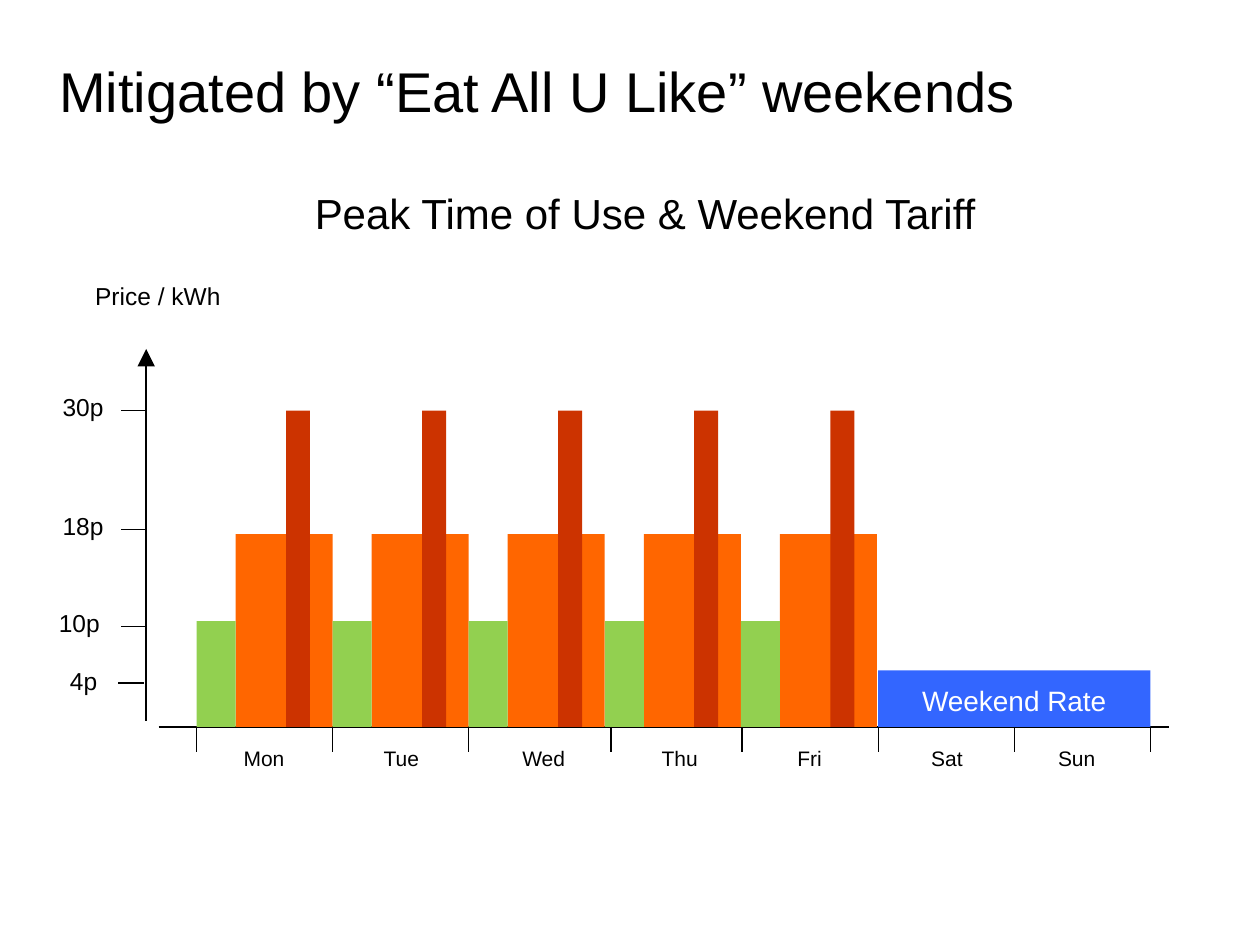
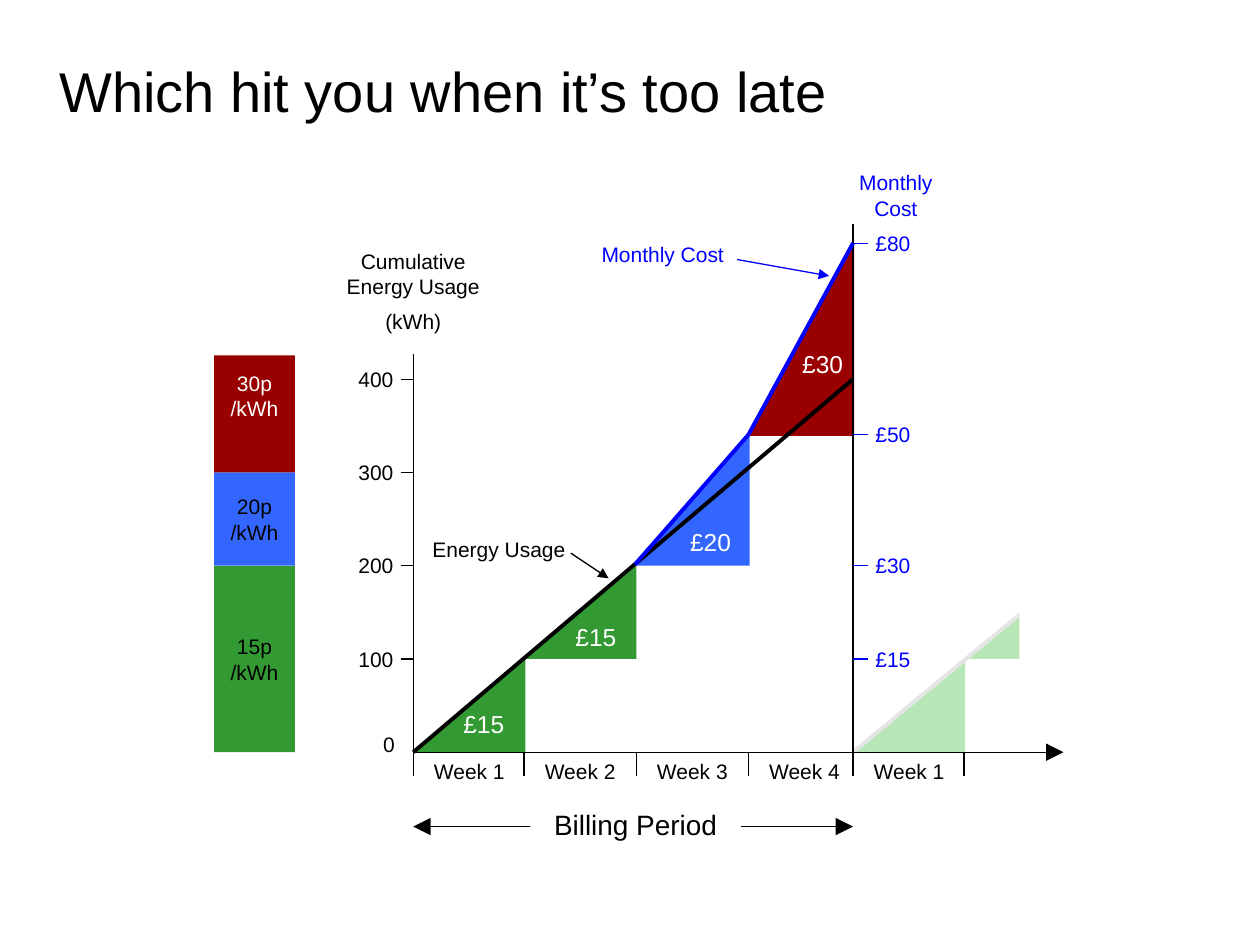
import pptx
import pptx.util
import pptx.dml.color
import pptx.enum.shapes
import pptx.enum.text
import pptx.oxml.xmlchemy

Inches = pptx.util.Inches
Pt = pptx.util.Pt
rgb = pptx.dml.color.RGBColor.from_string
new_element = pptx.oxml.xmlchemy.OxmlElement
SHAPE = pptx.enum.shapes.MSO_SHAPE
ALIGN = pptx.enum.text.PP_ALIGN
ANCHOR = pptx.enum.text.MSO_ANCHOR

FONT = "Arial"
BLACK, WHITE = "000000", "FFFFFF"
OFF_PEAK, DAYTIME, PEAK = "92D050", "FF6600", "CC3300"
GREEN, BLUE, RED = "339933", "3366FF", "990000"
PALE_GREEN, PALE_GREY, COST_BLUE = "B7E7B7", "E5E5E5", "0000FF"


def add_box(slide, left, top, width, height, lines=(), size=12, color=BLACK,
            align=ALIGN.CENTER, fill=None, kind=SHAPE.RECTANGLE,
            anchor=ANCHOR.TOP, gap=0):
    place = [Inches(length) for length in (left, top, width, height)]
    if fill:
        box = slide.shapes.add_shape(kind, *place)
        box.shadow.inherit = False
        box.fill.solid()
        box.fill.fore_color.rgb = rgb(fill)
        box.line.fill.background()
    else:
        box = slide.shapes.add_textbox(*place)
    frame = box.text_frame
    frame.word_wrap = True
    frame.vertical_anchor = anchor
    for number, line in enumerate(lines):
        paragraph = frame.add_paragraph() if number else frame.paragraphs[0]
        paragraph.alignment = align
        if number:
            paragraph.space_before = Pt(gap)
        run = paragraph.add_run()
        run.text = line
        run.font.name = FONT
        run.font.size = Pt(size)
        run.font.color.rgb = rgb(color)
    return box


def add_line(slide, x1, y1, x2, y2, color=BLACK, width=0.75, ends=(), head="lg"):
    line = slide.shapes.add_connector(
        pptx.enum.shapes.MSO_CONNECTOR.STRAIGHT,
        Inches(x1), Inches(y1), Inches(x2), Inches(y2))
    line.line.color.rgb = rgb(color)
    line.line.width = Pt(width)
    for end in ends:
        arrow = new_element(end)
        for key, value in (("type", "triangle"), ("w", head), ("len", head)):
            arrow.set(key, value)
        line.line._get_or_add_ln().append(arrow)
    line._element.spPr.append(new_element("a:effectLst"))


deck = pptx.Presentation()
deck.slide_width = Inches(10)
deck.slide_height = Inches(7.5)

slides = []
for heading in ("Mitigated by “Eat All U Like” weekends", "Which hit you when it’s too late"):
    slide = deck.slides.add_slide(deck.slide_layouts[5])
    title = slide.shapes.title
    title.left, title.top = Inches(0.37), Inches(0.35)
    title.width, title.height = Inches(8.63), Inches(0.84)
    title.text_frame.vertical_anchor = ANCHOR.TOP
    title.text_frame.margin_top = Inches(0.1)
    title.text_frame.auto_size = pptx.enum.text.MSO_AUTO_SIZE.NONE
    paragraph = title.text_frame.paragraphs[0]
    paragraph.alignment = ALIGN.LEFT
    run = paragraph.add_run()
    run.text = heading
    run.font.name = FONT
    run.font.size = Pt(32)
    run.font.color.rgb = rgb(BLACK)
    slides.append(slide)
tariff, billing = slides

baseline = 5.77
first_day, day_width = 1.56, 1.08
add_line(tariff, 1.26, baseline, 9.28, baseline)
add_line(tariff, 1.16, 5.72, 1.16, 2.77, ends=["a:tailEnd"])
add_box(tariff, 0.52, 2.18, 1.33, 0.33, ["Price / kWh"], 14, align=ALIGN.RIGHT)
add_box(tariff, 1.7, 1.44, 6.84, 0.5, ["Peak Time of Use & Weekend Tariff"], 24)

for price, tick_right, tick_y, label_left, label_top in (
        ("30p", 1.16, 3.26, 0.03, 3.06), ("18p", 1.16, 4.2, 0.03, 4.01),
        ("10p", 1.16, 4.97, 0, 4.78), ("4p", 1.14, 5.42, -0.02, 5.24)):
    add_line(tariff, tick_right, tick_y, tick_right - 0.2, tick_y)
    add_box(tariff, label_left, label_top, 0.89, 0.33, [price], 14, align=ALIGN.RIGHT)

for weekday in range(5):
    day_left = first_day + weekday * day_width
    for offset, top, width, rate_color in (
            (0.31, 4.24, 0.77, DAYTIME), (0, 4.93, 0.31, OFF_PEAK), (0.71, 3.26, 0.19, PEAK)):
        add_box(tariff, day_left + offset, top, width, baseline - top, fill=rate_color)

add_box(tariff, 6.97, 5.32, 2.16, 0.45, fill=BLUE)
add_box(tariff, 7.22, 5.38, 1.87, 0.37, ["Weekend Rate"], 16, WHITE, ALIGN.LEFT)

for tick_x in (1.56, 2.64, 3.72, 4.85, 5.89, 6.97, 8.05, 9.13):
    add_line(tariff, tick_x, baseline, tick_x, baseline + 0.2)
for day, label_left in (("Mon", 1.7), ("Tue", 2.79), ("Wed", 3.92), ("Thu", 5),
                        ("Fri", 6.03), ("Sat", 7.12), ("Sun", 8.15)):
    add_box(tariff, label_left, 5.87, 0.79, 0.3, [day])

origin_x, origin_y = 3.28, 5.97
period_end = 6.77
step = 0.74
week_edges = [origin_x, 4.16, 5.05, 5.94, period_end, 7.65]

add_line(billing, origin_x, origin_y, origin_x, 2.81)
for rate, top, height, band_color, text_color in (
        ("20p", 3.75, 0.74, BLUE, BLACK), ("30p", 2.82, 0.93, RED, WHITE),
        ("15p", 4.49, 1.48, GREEN, BLACK)):
    band = add_box(billing, 1.7, top, 0.64, height, [rate, "/kWh"], color=text_color,
                   fill=band_color, anchor=ANCHOR.MIDDLE)
    if rate == "30p":
        band.text_frame.margin_bottom = Inches(0.34)

for left, top, width, height, wedge_color in (
        (3.28, 5.23, 0.89, step, GREEN), (4.16, 4.49, 0.89, step, GREEN),
        (5.01, 3.45, 0.94, 1.04, BLUE), (5.94, 1.93, 0.84, 1.53, RED),
        (6.77, 5.23, 0.89, step, PALE_GREEN), (7.66, 4.49, 0.89, step, PALE_GREEN)):
    wedge = add_box(billing, left, top, width, height, fill=wedge_color,
                    kind=SHAPE.RIGHT_TRIANGLE)
    wedge._element.spPr.get_or_add_xfrm().set("flipH", "1")

add_line(billing, origin_x, origin_y, period_end, 3.01, width=2.25)
add_line(billing, period_end, origin_y, 8.44, 4.59, PALE_GREY, 2.25)
add_box(billing, 8.09, 4.12, 0.97, 1.29, fill=WHITE)
add_line(billing, origin_x, origin_y, 8.44, origin_y, ends=["a:tailEnd"])

add_box(billing, 2.44, 5.76, 0.79, 0.3, ["0"], align=ALIGN.RIGHT)
for hundreds in range(1, 5):
    tick_y = origin_y - hundreds * step
    add_line(billing, 3.18, tick_y, origin_x, tick_y)
    add_box(billing, 2.24, tick_y - 0.15, 0.98, 0.3, [str(hundreds * 100)], align=ALIGN.RIGHT)

for edge in week_edges:
    add_line(billing, edge, origin_y, edge, 6.16)
for edge, week in zip(week_edges, (1, 2, 3, 4, 1)):
    add_box(billing, edge, origin_y, 0.89, 0.3, [f"Week {week}"])

add_line(billing, origin_x, 6.56, period_end, 6.56, ends=["a:headEnd", "a:tailEnd"])
add_box(billing, 4.21, 6.36, 1.67, 0.37, ["Billing Period"], 16, fill=WHITE)
add_box(billing, 2.59, 1.92, 1.38, 0.8, ["Cumulative Energy Usage", "(kWh)"], gap=6)

add_line(billing, period_end, origin_y, period_end, 1.78)
add_box(billing, 6.64, 1.3, 0.94, 0.5, ["Monthly Cost"], color=COST_BLUE)
add_line(billing, 5.04, 4.48, 5.94, 3.45, COST_BLUE, 2.25)
add_line(billing, 5.94, 3.45, period_end, 1.93, COST_BLUE, 2.25)
for total, tick_y in (("£80", 1.93), ("£50", 3.45), ("£30", 4.49), ("£15", 5.23)):
    add_line(billing, period_end, tick_y, 6.89, tick_y, COST_BLUE)
    add_box(billing, 6.85, tick_y - 0.15, 0.53, 0.3, [total], color=COST_BLUE, align=ALIGN.LEFT)

add_box(billing, 3.27, 4.21, 1.38, 0.3, ["Energy Usage"])
add_line(billing, 4.53, 4.39, 4.83, 4.59, ends=["a:tailEnd"], head="med")
add_box(billing, 4.57, 1.87, 1.38, 0.3, ["Monthly Cost"], color=COST_BLUE)
add_line(billing, 5.85, 2.06, 6.58, 2.19, COST_BLUE, ends=["a:tailEnd"], head="med")

for weekly_cost, left, top in (("£15", 3.41, 5.58), ("£15", 4.3, 4.89),
                               ("£20", 5.21, 4.13), ("£30", 6.1, 2.72)):
    add_box(billing, left, top, 0.86, 0.33, [weekly_cost], 14, WHITE)

deck.save("out.pptx")
